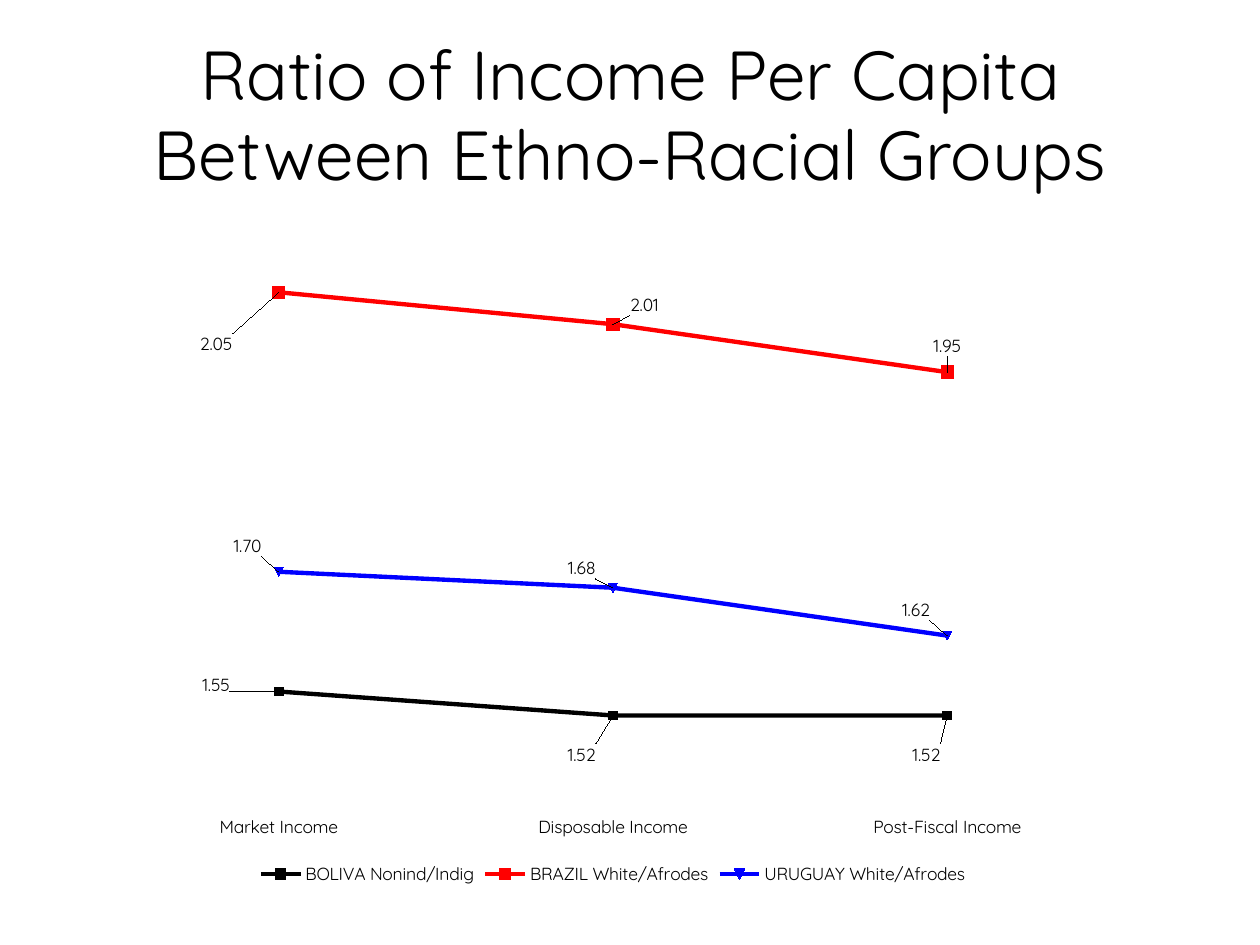
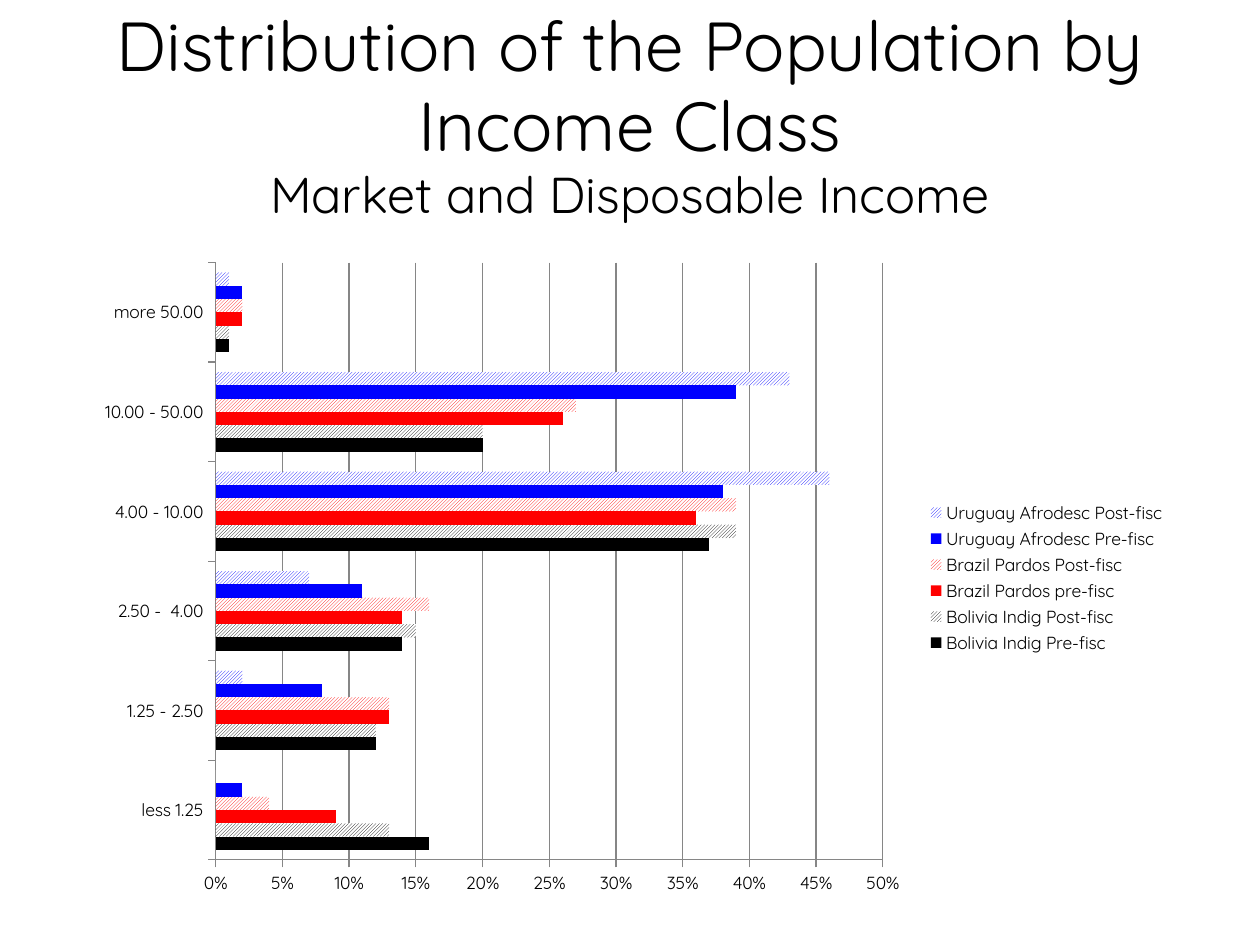
from dataclasses import dataclass
from typing import Optional

from lxml import etree
from pptx import Presentation
from pptx.chart.data import CategoryChartData
from pptx.dml.color import RGBColor
from pptx.enum.chart import (XL_CHART_TYPE, XL_LABEL_POSITION, XL_LEGEND_POSITION,
                             XL_MARKER_STYLE, XL_TICK_MARK)
from pptx.enum.dml import MSO_PATTERN
from pptx.enum.text import MSO_ANCHOR, MSO_AUTO_SIZE, PP_ALIGN
from pptx.oxml.ns import qn
from pptx.util import Inches, Pt

LINE_CHART = XL_CHART_TYPE.LINE_MARKERS
BAR_CHART = XL_CHART_TYPE.BAR_CLUSTERED
LABEL_CENTER = XL_LABEL_POSITION.CENTER
LEGEND_BOTTOM, LEGEND_RIGHT = XL_LEGEND_POSITION.BOTTOM, XL_LEGEND_POSITION.RIGHT
MARKER_AUTO, MARKER_SQUARE = XL_MARKER_STYLE.AUTOMATIC, XL_MARKER_STYLE.SQUARE
TICK_NONE, TICK_OUT = XL_TICK_MARK.NONE, XL_TICK_MARK.OUTSIDE
HATCH = MSO_PATTERN.LIGHT_UPWARD_DIAGONAL

# Shared look
FONT = "Quicksand"
COLORS = {"bolivia": "000000", "brazil": "FF0000", "uruguay": "0000FF",
          "text": "000000", "paper": "FFFFFF", "grid": "868686"}
TITLE_BOX = (0.5, 0.3, 9, 1.25)
TITLE_SIZE, SUBTITLE_SIZE = 39.6, 28.8
TITLE_SPACING = 0.96
TITLE_ONLY_LAYOUT = 5


@dataclass
class RatioLine:
    name: str
    country: str
    ratios: tuple
    label_offsets: tuple  # fractions of the chart's width and height
    marker: XL_MARKER_STYLE = MARKER_AUTO
    marker_size: int = 5


@dataclass
class IncomeBars:
    name: str
    country: str
    shares: tuple
    hatched: bool = False


@dataclass
class ChartFrame:
    box: tuple   # left, top, width, height in inches
    plot: tuple  # x, y, w, h as fractions of the chart
    kind: XL_CHART_TYPE
    legend: XL_LEGEND_POSITION
    number_format: str


# Slide data
INCOME_STAGES = ["Market Income", "Disposable Income", "Post-Fiscal Income"]
RATIO_LINES = [
    RatioLine("BOLIVA Nonind/Indig", "bolivia", (1.55, 1.52, 1.52),
              ((-0.06, -0.01), (-0.03, 0.06), (-0.02, 0.06))),
    RatioLine("BRAZIL White/Afrodes", "brazil", (2.05, 2.01, 1.95),
              ((-0.06, 0.08), (0.03, -0.03), (0, -0.04)), MARKER_SQUARE, 7),
    RatioLine("URUGUAY White/Afrodes", "uruguay", (1.7, 1.68, 1.62),
              ((-0.03, -0.04), (-0.03, -0.03), (-0.03, -0.04))),
]
RATIO_FRAME = ChartFrame((0.72, 1.9, 8.29, 5.16), (0.02, 0.02, 0.96, 0.86),
                         LINE_CHART, LEGEND_BOTTOM, "0.00")

INCOME_CLASSES = ["less 1.25", "1.25 - 2.50", "2.50 -  4.00",
                  "4.00 - 10.00", "10.00 - 50.00", "more 50.00"]
INCOME_BARS = [
    IncomeBars("Bolivia Indig Pre-fisc", "bolivia", (0.16, 0.12, 0.14, 0.37, 0.2, 0.01)),
    IncomeBars("Bolivia Indig Post-fisc", "bolivia", (0.13, 0.12, 0.15, 0.39, 0.2, 0.01), True),
    IncomeBars("Brazil Pardos pre-fisc", "brazil", (0.09, 0.13, 0.14, 0.36, 0.26, 0.02)),
    IncomeBars("Brazil Pardos Post-fisc", "brazil", (0.04, 0.13, 0.16, 0.39, 0.27, 0.02), True),
    IncomeBars("Uruguay Afrodesc Pre-fisc", "uruguay", (0.02, 0.08, 0.11, 0.38, 0.39, 0.02)),
    IncomeBars("Uruguay Afrodesc Post-fisc", "uruguay", (0, 0.02, 0.07, 0.46, 0.43, 0.01), True),
]
INCOME_FRAME = ChartFrame((0.67, 1.98, 8.68, 5.21), (0.12, 0.02, 0.61, 0.91),
                          BAR_CHART, LEGEND_RIGHT, "0%")


def rgb(name: str) -> RGBColor:
    return RGBColor.from_string(COLORS[name])


def apply(target, values: dict) -> None:
    for name, value in values.items():
        setattr(target, name, value)


def format_font(font, size: float) -> None:
    apply(font, {"name": FONT, "size": Pt(size), "bold": False})
    font.color.rgb = rgb("text")


def format_line(line, color: str, width: float) -> None:
    line.color.rgb = rgb(color)
    line.width = Pt(width)


def add_titled_slide(presentation, title: str, subtitle: Optional[str] = None):
    slide = presentation.slides.add_slide(presentation.slide_layouts[TITLE_ONLY_LAYOUT])
    shape = slide.shapes.title
    apply(shape, dict(zip(("left", "top", "width", "height"), map(Inches, TITLE_BOX))))
    apply(shape.text_frame, {"word_wrap": True, "auto_size": MSO_AUTO_SIZE.NONE,
                             "vertical_anchor": MSO_ANCHOR.MIDDLE})
    paragraph = shape.text_frame.paragraphs[0]
    apply(paragraph, {"alignment": PP_ALIGN.CENTER, "line_spacing": TITLE_SPACING})
    run = paragraph.add_run()
    run.text = title
    format_font(run.font, TITLE_SIZE)
    if subtitle:
        paragraph.add_line_break()
        run = paragraph.add_run()
        run.text = subtitle
        format_font(run.font, SUBTITLE_SIZE)
    return slide


def add_layout(parent, index: int, **values: float) -> None:
    """Put a manual layout into a chart element at the given child index."""
    layout = etree.Element(qn("c:layout"))
    manual = etree.SubElement(layout, qn("c:manualLayout"))
    for name, value in values.items():
        etree.SubElement(manual, qn(f"c:{name}")).set("val", str(value))
    parent.insert(index, layout)


def add_framed_chart(slide, frame: ChartFrame, categories: list, series: list):
    data = CategoryChartData(number_format=frame.number_format)
    data.categories = categories
    for name, values in series:
        data.add_series(name, values)
    chart = slide.shapes.add_chart(frame.kind, *map(Inches, frame.box), data).chart
    apply(chart, {"has_title": False, "has_legend": True})
    apply(chart.legend, {"position": frame.legend, "include_in_layout": False})
    format_font(chart.font, 10)
    chart.plots[0].vary_by_categories = False

    # Fixed inner plot area
    plot_area = chart._chartSpace.chart.plotArea
    for old_layout in plot_area.findall(qn("c:layout")):
        plot_area.remove(old_layout)
    x, y, w, h = frame.plot
    etree.SubElement(plot_area, qn("c:layout"))
    plot_area.remove(plot_area[-1])
    add_layout(plot_area, 0, x=x, y=y, w=w, h=h)
    manual = plot_area[0][0]
    for index, (name, value) in enumerate((("layoutTarget", "inner"),
                                           ("xMode", "edge"), ("yMode", "edge"))):
        mode = etree.Element(qn(f"c:{name}"))
        mode.set("val", value)
        manual.insert(index, mode)
    return chart


def draw_ratio_slide(presentation) -> None:
    slide = add_titled_slide(presentation,
                             "Ratio of Income Per Capita Between Ethno-Racial Groups")
    chart = add_framed_chart(slide, RATIO_FRAME, INCOME_STAGES,
                             [(line.name, line.ratios) for line in RATIO_LINES])
    apply(chart.value_axis, {"minimum_scale": 1.4, "maximum_scale": 2.1,
                             "has_major_gridlines": False, "visible": False})
    apply(chart.category_axis, {"major_tick_mark": TICK_NONE, "minor_tick_mark": TICK_NONE})
    chart.category_axis.format.line.fill.background()

    for series, line in zip(chart.plots[0].series, RATIO_LINES):
        series.smooth = False
        format_line(series.format.line, line.country, 2.5)
        apply(series.marker, {"style": line.marker, "size": line.marker_size})
        series.marker.format.fill.solid()
        series.marker.format.fill.fore_color.rgb = rgb(line.country)
        format_line(series.marker.format.line, line.country, 0.75)
        apply(series.data_labels, {"show_value": True, "position": LABEL_CENTER,
                                   "number_format": RATIO_FRAME.number_format,
                                   "number_format_is_linked": False})
        # Each label is moved away from its point
        for index in range(len(line.ratios)):
            series.points[index].data_label.position = LABEL_CENTER
        labels = series._element.iter(qn("c:dLbl"))
        for label, (x, y) in zip(list(labels), line.label_offsets):
            add_layout(label, 1, x=x, y=y)


def draw_income_slide(presentation) -> None:
    slide = add_titled_slide(presentation, "Distribution of the Population by Income Class",
                             "Market and Disposable Income")
    chart = add_framed_chart(slide, INCOME_FRAME, INCOME_CLASSES,
                             [(bars.name, bars.shares) for bars in INCOME_BARS])
    apply(chart.plots[0], {"gap_width": 150, "overlap": 0})
    apply(chart.value_axis, {"minimum_scale": 0, "maximum_scale": 0.5, "major_unit": 0.05,
                             "has_major_gridlines": True})
    apply(chart.value_axis.tick_labels, {"number_format": INCOME_FRAME.number_format,
                                         "number_format_is_linked": False})
    format_line(chart.value_axis.major_gridlines.format.line, "grid", 0.75)
    for axis in (chart.category_axis, chart.value_axis):
        apply(axis, {"major_tick_mark": TICK_OUT, "minor_tick_mark": TICK_NONE})
        format_line(axis.format.line, "grid", 0.75)

    for series, bars in zip(chart.plots[0].series, INCOME_BARS):
        series.invert_if_negative = False
        fill = series.format.fill
        if bars.hatched:
            fill.patterned()
            fill.pattern = HATCH
            fill.back_color.rgb = rgb("paper")
        else:
            fill.solid()
        fill.fore_color.rgb = rgb(bars.country)


def main() -> None:
    presentation = Presentation()
    apply(presentation, {"slide_width": Inches(10), "slide_height": Inches(7.5)})
    draw_ratio_slide(presentation)
    draw_income_slide(presentation)
    presentation.save("out.pptx")


if __name__ == "__main__":
    main()
